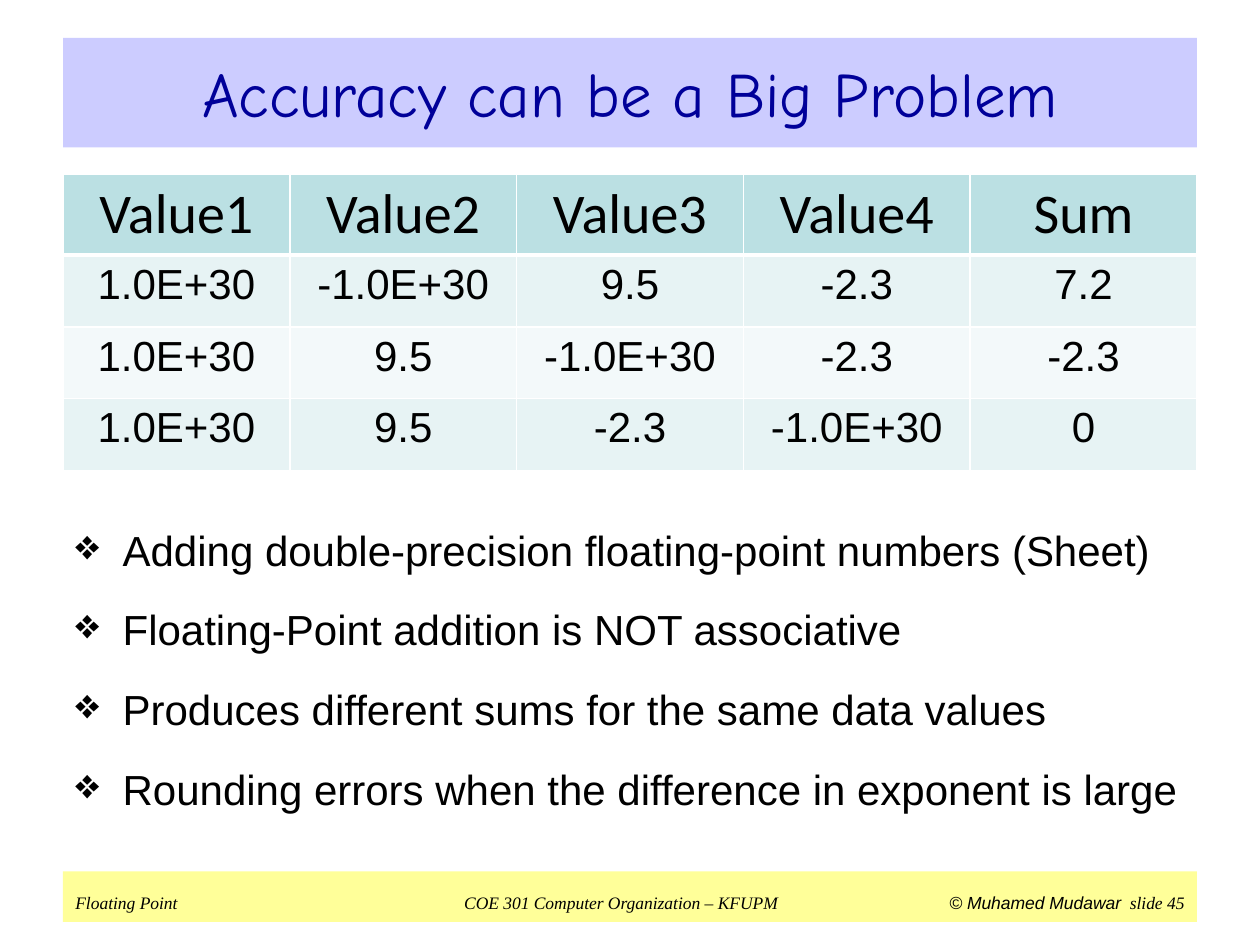
from lxml.etree import SubElement as Sub
from pptx import Presentation
from pptx.dml.color import RGBColor
from pptx.enum.shapes import MSO_SHAPE as Kind
from pptx.enum.text import MSO_ANCHOR as Anchor, PP_ALIGN as Align
from pptx.oxml.ns import qn
from pptx.util import Pt

LEFT, WIDTH = 36, 648
HEAD = dict(name="Calibri", size=Pt(32))
BODY = dict(name="Arial", size=Pt(24))
NOTE = dict(name="Times New Roman", size=Pt(10), italic=True)
ROWS = [
    ["Value1", "Value2", "Value3", "Value4", "Sum"],
    ["1.0E+30", "-1.0E+30", "9.5", "-2.3", "7.2"],
    ["1.0E+30", "9.5", "-1.0E+30", "-2.3", "-2.3"],
    ["1.0E+30", "9.5", "-2.3", "-1.0E+30", "0"],
]
FILLS = ["BBE0E3", "E7F3F4", "F3F9FA", "E7F3F4"]
POINTS = [
    "Adding double-precision floating-point numbers (Sheet)",
    "Floating-Point addition is NOT associative",
    "Produces different sums for the same data values",
    "Rounding errors when the difference in exponent is large",
]


def paint(item, color):
    item.fill.solid()
    item.fill.fore_color.rgb = RGBColor.from_string(color)


def write(para, text, form, color="000000"):
    run = para.add_run()
    run.text = text
    for key, value in form.items():
        setattr(run.font, key, value)
    run.font.color.rgb = RGBColor.from_string(color)


def place(shape, top, height):
    box = dict(left=LEFT, top=top, width=WIDTH, height=height)
    for key, value in box.items():
        setattr(shape, key, Pt(value))


def add_title(slide):
    title = slide.shapes.title
    place(title, 21.6, 62.6)
    paint(title, "CCCCFF")
    frame = title.text_frame
    frame.vertical_anchor = Anchor.MIDDLE
    para = frame.paragraphs[0]
    para.alignment = Align.CENTER
    write(para, "Accuracy can be a Big Problem",
          dict(name="Comic Neue", size=Pt(36)), "000099")


def edge(cell, low):
    """Draw white cell borders; low is the width of the bottom one."""
    props = cell._tc.get_or_add_tcPr()
    for spot, (side, wide) in enumerate(zip("LRTB", (1, 1, 1, low))):
        line = Sub(props, qn(f"a:ln{side}"), w=str(Pt(wide)))
        fill = Sub(line, qn("a:solidFill"))
        Sub(fill, qn("a:srgbClr"), val="FFFFFF")
        props.insert(spot, line)


def add_grid(slide):
    shape = slide.shapes.add_table(
        len(ROWS), len(ROWS[0]), Pt(LEFT), Pt(99.4), Pt(WIDTH), Pt(168.4))
    grid = shape.table
    for col in grid.columns:
        col.width = Pt(WIDTH / len(ROWS[0]))
    for i, (row, color) in enumerate(zip(ROWS, FILLS)):
        grid.rows[i].height = Pt(41 if i else 45.4)
        for j, text in enumerate(row):
            cell = grid.cell(i, j)
            paint(cell, color)
            edge(cell, 1 if i else 3)
            para = cell.text_frame.paragraphs[0]
            para.alignment = Align.CENTER
            write(para, text, BODY if i else HEAD)


def add_list(slide):
    box = slide.shapes.add_textbox(Pt(LEFT), Pt(290.2), Pt(WIDTH), Pt(205))
    frame = box.text_frame
    frame.word_wrap = True
    for i, text in enumerate(POINTS):
        para = frame.add_paragraph() if i else frame.paragraphs[0]
        para.line_spacing = 1.2
        para.space_before = Pt(11)
        props = para._p.get_or_add_pPr()
        props.set("marL", str(Pt(27)))
        props.set("indent", str(Pt(-27)))
        Sub(props, qn("a:buChar"), char="❖")
        write(para, text, BODY)


def add_foot(slide):
    bar = slide.shapes.add_shape(
        Kind.RECTANGLE, Pt(LEFT), Pt(498), Pt(WIDTH), Pt(28.8))
    bar.shadow.inherit = False
    paint(bar, "FFFF99")
    bar.line.fill.background()
    frame = bar.text_frame
    frame.vertical_anchor = Anchor.BOTTOM
    para = frame.paragraphs[0]
    para.alignment = Align.LEFT
    tabs = Sub(para._p.get_or_add_pPr(), qn("a:tabLst"))
    for spot, kind in ((310.5, "ctr"), (634, "r")):
        Sub(tabs, qn("a:tab"), pos=str(Pt(spot)), algn=kind)
    write(para, "Floating Point\t COE 301 Computer Organization – KFUPM\t ",
          NOTE)
    write(para, "© Muhamed Mudawar", {**NOTE, "name": "Arial"})
    write(para, " ", dict(name="Arial", size=Pt(18)))
    write(para, "slide 45", NOTE)


def main():
    deck = Presentation()
    deck.slide_width, deck.slide_height = Pt(720), Pt(540)
    slide = deck.slides.add_slide(deck.slide_layouts[5])
    for add in (add_foot, add_title, add_grid, add_list):
        add(slide)
    deck.save("out.pptx")


if __name__ == "__main__":
    main()
